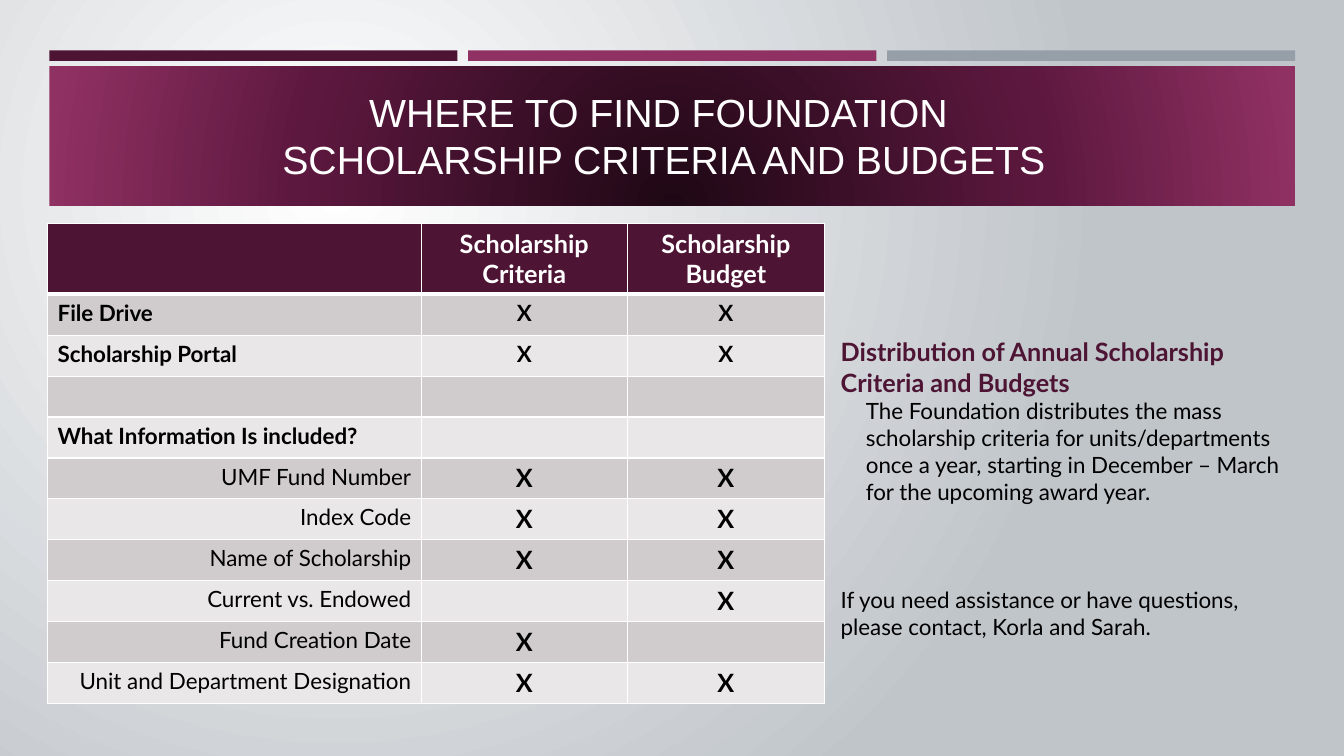
"""Build the slide on where to find scholarship criteria and budgets."""
from copy import deepcopy
from dataclasses import dataclass

from lxml.etree import SubElement
from pptx import Presentation
from pptx.dml.color import RGBColor as RGB
from pptx.enum.shapes import MSO_SHAPE as Shape
from pptx.enum.text import MSO_ANCHOR as Anchor, MSO_AUTO_SIZE as AutoSize, PP_ALIGN as Align
from pptx.oxml.ns import qn
from pptx.util import Pt

HEADING = "WHERE TO FIND FOUNDATION \nSCHOLARSHIP CRITERIA AND BUDGETS"
COLUMNS = ("", "Scholarship Criteria", "Scholarship Budget")
SOURCES = [
    ("File Drive", "X", "X"),
    ("Scholarship Portal", "X", "X"),
    ("", "", ""),
    ("What Information Is included?", "", ""),
]
DETAILS = [
    ("UMF Fund Number", "X", "X"),
    ("Index Code", "X", "X"),
    ("Name of Scholarship", "X", "X"),
    ("Current vs. Endowed", "", "X"),
    ("Fund Creation Date", "X", ""),
    ("Unit and Department Designation", "X", "X"),
]
DISTRIBUTION = "Distribution of Annual Scholarship Criteria and Budgets"
SCHEDULE = (
    "The Foundation distributes the mass scholarship criteria for units/departments "
    "once a year, starting in December – March for the upcoming award year."
)
CONTACT = "If you need assistance or have questions, please contact, Korla and Sarah."


@dataclass(frozen=True)
class Theme:
    """Colours, fonts and type sizes of the slide."""
    plum: str = "4D1434"
    berry: str = "903163"
    slate: str = "969FA7"
    white: str = "FFFFFF"
    black: str = "000000"
    bands: tuple = ("D0CCCE", "E9E7E8")
    backdrop: tuple = ((0, "FFFFFF"), (100, "C0C5CA"))
    glow: tuple = ((0, "1F0815"), (60, "5D183F"), (100, "903163"))
    heading_font: str = "Arial"
    text_font: str = "Lato"
    heading: int = 28
    large: int = 18
    regular: int = 16


THEME = Theme()


def write(paragraph, text, size=THEME.regular, color=THEME.black, bold=False,
          font=THEME.text_font, align=Align.LEFT, before=0):
    """Fill a paragraph with formatted text."""
    paragraph.text = text
    paragraph.alignment = align
    paragraph.space_before = Pt(before)
    for run in paragraph.runs:
        run.font.size, run.font.bold, run.font.name = Pt(size), bold, font
        run.font.color.rgb = RGB.from_string(color)
    for line_break in paragraph._p.findall(qn("a:br")):
        line_break.append(deepcopy(paragraph.runs[0]._r.rPr))


def radial(fill, owner, stops, focus):
    """Give a fill a circular gradient around a focus rectangle."""
    fill.gradient()
    gradient = owner.xpath(".//a:gradFill")[0]
    for child in list(gradient):
        gradient.remove(child)
    stop_list = SubElement(gradient, qn("a:gsLst"))
    for position, color in stops:
        stop = SubElement(stop_list, qn("a:gs"), pos=str(position * 1000))
        SubElement(stop, qn("a:srgbClr"), val=color)
    circle = SubElement(gradient, qn("a:path"), path="circle")
    edges = {side: str(value * 1000) for side, value in zip("ltrb", focus)}
    SubElement(circle, qn("a:fillToRect"), **edges)


def block(slide, left, top, width, height, color):
    """Add a flat rectangle without an outline."""
    shape = slide.shapes.add_shape(Shape.RECTANGLE, Pt(left), Pt(top), Pt(width), Pt(height))
    shape.shadow.inherit = False
    shape.line.fill.background()
    shape.fill.solid()
    shape.fill.fore_color.rgb = RGB.from_string(color)
    return shape


def place(holder, left, top, width, height, anchor):
    """Move a placeholder and fix its text layout."""
    holder.left, holder.top = Pt(left), Pt(top)
    holder.width, holder.height = Pt(width), Pt(height)
    frame = holder.text_frame
    frame.word_wrap, frame.auto_size = True, AutoSize.NONE
    frame.vertical_anchor = anchor
    return frame


def paint(cell, color, top, bottom):
    """Set the white borders and the fill of a cell."""
    properties = cell._tc.get_or_add_tcPr()
    for side, weight in (("L", 1), ("R", 1), ("T", top), ("B", bottom)):
        border = SubElement(properties, qn(f"a:ln{side}"), w=str(Pt(weight)))
        SubElement(SubElement(border, qn("a:solidFill")), qn("a:srgbClr"), val=THEME.white)
    cell.fill.solid()
    cell.fill.fore_color.rgb = RGB.from_string(color)


def add_availability(slide):
    """Add the table of what can be found where."""
    rows = [COLUMNS, *SOURCES, *DETAILS]
    widths, header_height, row_height = (267, 147, 141), 50.4, 29.25
    total = header_height + row_height * (len(rows) - 1)
    table = slide.shapes.add_table(
        len(rows), len(widths), Pt(34), Pt(159.8), Pt(sum(widths)), Pt(total)).table
    for column, width in zip(table.columns, widths):
        column.width = Pt(width)
    for r, row in enumerate(rows):
        header, detail = r == 0, r > len(SOURCES)
        table.rows[r].height = Pt(header_height if header else row_height)
        for c, text in enumerate(row):
            cell, label = table.cell(r, c), c == 0
            paint(cell, THEME.plum if header else THEME.bands[(r - 1) % 2],
                  top=3 if r == 1 else 1, bottom=3 if header else 1)
            label_align = Align.RIGHT if detail else Align.LEFT
            write(cell.text_frame.paragraphs[0], text,
                  size=THEME.large if header or detail and not label else THEME.regular,
                  color=THEME.white if header else THEME.black,
                  bold=not (detail and label),
                  align=label_align if label else Align.CENTER)


def add_guidance(holder):
    """Fill the body placeholder with the distribution notes."""
    frame = place(holder, 593.3, 236.9, 332.6, 225.4, Anchor.TOP)
    notes = (
        (DISTRIBUTION, 0, dict(size=THEME.large, color=THEME.plum, bold=True)),
        (SCHEDULE, 1, {}),
        (CONTACT, 0, dict(before=58.5)),
    )
    for i, (text, level, style) in enumerate(notes):
        paragraph = frame.add_paragraph() if i else frame.paragraphs[0]
        write(paragraph, text, **style)
        paragraph.level = level
        properties = paragraph._p.get_or_add_pPr()
        properties.set("marL", str(Pt(18 * level)))
        properties.set("indent", "0")
        SubElement(properties, qn("a:buNone"))


def main():
    """Assemble and save the slide."""
    deck = Presentation()
    deck.slide_width, deck.slide_height = Pt(960), Pt(540)
    slide = deck.slides.add_slide(deck.slide_layouts[1])
    heading, guidance = slide.placeholders
    radial(slide.background.fill, slide._element, THEME.backdrop, (50, 50, 100, 100))

    left, bar_width, pitch = 35.2, 291.6, 299.2
    for i, color in enumerate((THEME.plum, THEME.berry, THEME.slate)):
        block(slide, left + i * pitch, 36, bar_width, 7.5, color)
    banner = block(slide, left, 47.5, bar_width + 2 * pitch, 99.5, THEME.plum)
    radial(banner.fill, banner._element, THEME.glow, (50, 130, 50, -30))

    frame = place(heading, 17.3, 57.6, 913.7, 77.8, Anchor.MIDDLE)
    write(frame.paragraphs[0], HEADING, size=THEME.heading, color=THEME.white,
          font=THEME.heading_font, align=Align.CENTER)
    slide.shapes._spTree.append(heading._element)
    add_guidance(guidance)
    add_availability(slide)
    deck.save("out.pptx")


if __name__ == "__main__":
    main()
